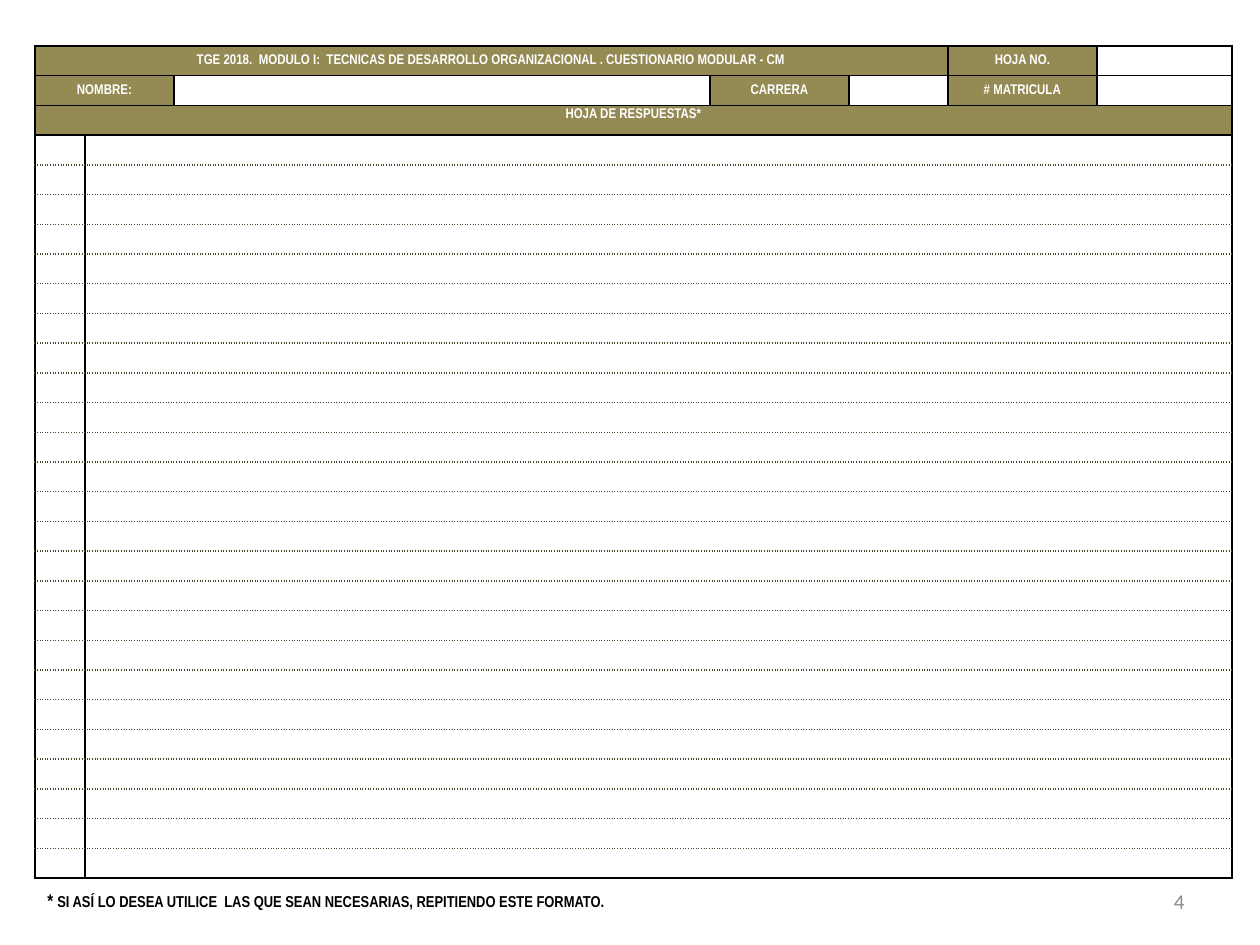
from lxml import etree
from pptx import Presentation
from pptx import util as u
from pptx.dml.color import RGBColor
from pptx.enum import text
from pptx.oxml.ns import qn

# Content: (row, first column, column span, label)
LABELS = [
    (0, 0, 5, "TGE 2018.  MODULO I:  TECNICAS DE DESARROLLO ORGANIZACIONAL . CUESTIONARIO MODULAR - CM"),
    (0, 5, 1, "HOJA NO."),
    (1, 0, 2, "NOMBRE:"),
    (1, 3, 1, "CARRERA"),
    (1, 5, 1, "# MATRICULA"),
    (2, 0, 7, "HOJA DE RESPUESTAS*"),
]
FOOTNOTE = [("* ", "mark"),
            ("SI ASÍ LO DESEA UTILICE  LAS QUE SEAN NECESARIAS, REPITIENDO ESTE FORMATO.", "note")]
PAGE_NUMBER = [("4", "page")]

# Layout in px
COLUMNS = [50, 89, 536, 139, 99, 149, 135]
HEADER_ROWS, ANSWER_ROWS = 3, 25
SHEET = (35, 46, sum(COLUMNS), 833)
FOOTNOTE_BOX = (35, 883, 1171, 37)
PAGE_BOX = (903, 876, 294, 50)
TITLE_INSET = 3

THEME = {
    "band": "948A54", "paper": "FFFFFF", "rule": "000000", "dots": "4A452A",
    "label": dict(size=8, name="Arial Narrow", color="FFFFFF", bold=True),
    "mark": dict(size=10.5, name="Arial Narrow", color="000000", bold=True),
    "note": dict(size=9, name="Arial Narrow", color="000000", bold=True),
    "page": dict(size=12, name="Calibri", color="8C8C8C", bold=False),
}


def px(n):
    return round(n * u.Inches(1) / 126)


def write(paragraph, runs):
    for words, style in runs:
        run = paragraph.add_run()
        run.text = words
        look = dict(THEME[style])
        run.font.color.rgb = RGBColor.from_string(look.pop("color"))
        look["size"] = u.Pt(look["size"])
        for key, value in look.items():
            setattr(run.font, key, value)


def add_text(slide, box, runs, **format_values):
    frame = slide.shapes.add_textbox(*map(px, box)).text_frame
    frame.word_wrap = True
    for key, value in format_values.items():
        if key == "alignment":
            frame.paragraphs[0].alignment = value
        else:
            setattr(frame, key, value)
    write(frame.paragraphs[0], runs)


def set_borders(cell, dotted_sides):
    props = cell._tc.get_or_add_tcPr()
    for i, side in enumerate("LRTB"):
        dotted = side in dotted_sides
        line = etree.Element(qn(f"a:ln{side}"), w=str(u.Pt(1)))
        fill = etree.SubElement(line, qn("a:solidFill"))
        etree.SubElement(fill, qn("a:srgbClr"), val=THEME["dots" if dotted else "rule"])
        etree.SubElement(line, qn("a:prstDash"), val="sysDot" if dotted else "solid")
        props.insert(i, line)


def add_sheet(slide):
    row_count = HEADER_ROWS + ANSWER_ROWS
    table = slide.shapes.add_table(row_count, len(COLUMNS), *map(px, SHEET)).table
    table.first_row = table.horz_banding = False
    for column, width in zip(table.columns, COLUMNS):
        column.width = px(width)
    for row in table.rows:
        row.height = px(SHEET[3] / row_count)

    # Fills, borders and a small type size that keeps empty rows low
    for r in range(row_count):
        dotted = ("T" if r > HEADER_ROWS else "") + ("B" if HEADER_ROWS <= r < row_count - 1 else "")
        for c in range(len(COLUMNS)):
            cell = table.cell(r, c)
            cell.margin_top = cell.margin_bottom = 0
            if r < HEADER_ROWS:
                cell.fill.solid()
                cell.fill.fore_color.rgb = RGBColor.from_string(THEME["paper"])
            else:
                cell.fill.background()
            set_borders(cell, dotted)
            etree.SubElement(cell.text_frame.paragraphs[0]._p, qn("a:endParaRPr"),
                             sz=str(THEME["label"]["size"] * 100))
        if r >= HEADER_ROWS:
            table.cell(r, 1).merge(table.cell(r, len(COLUMNS) - 1))

    # Header labels
    for r, c, span, label in LABELS:
        cell = table.cell(r, c)
        if span > 1:
            cell.merge(table.cell(r, c + span - 1))
        for part in range(c, c + span):
            table.cell(r, part).fill.fore_color.rgb = RGBColor.from_string(THEME["band"])
        cell.vertical_anchor = text.MSO_ANCHOR.MIDDLE
        paragraph = cell.text_frame.paragraphs[0]
        paragraph.alignment = text.PP_ALIGN.CENTER
        paragraph.space_before = u.Pt(3.6)
        write(paragraph, [(label, "label")])

    # The last header row hangs from its top edge
    title = table.cell(HEADER_ROWS - 1, 0)
    title.vertical_anchor = text.MSO_ANCHOR.TOP
    title.margin_top = px(TITLE_INSET)


def main():
    deck = Presentation()
    deck.slide_width, deck.slide_height = u.Inches(10), u.Inches(7.5)
    slide = deck.slides.add_slide(deck.slide_layouts[6])
    add_text(slide, PAGE_BOX, PAGE_NUMBER, alignment=text.PP_ALIGN.RIGHT,
             vertical_anchor=text.MSO_ANCHOR.MIDDLE)
    add_sheet(slide)
    add_text(slide, FOOTNOTE_BOX, FOOTNOTE, auto_size=text.MSO_AUTO_SIZE.SHAPE_TO_FIT_TEXT)
    deck.save("out.pptx")


if __name__ == "__main__":
    main()
